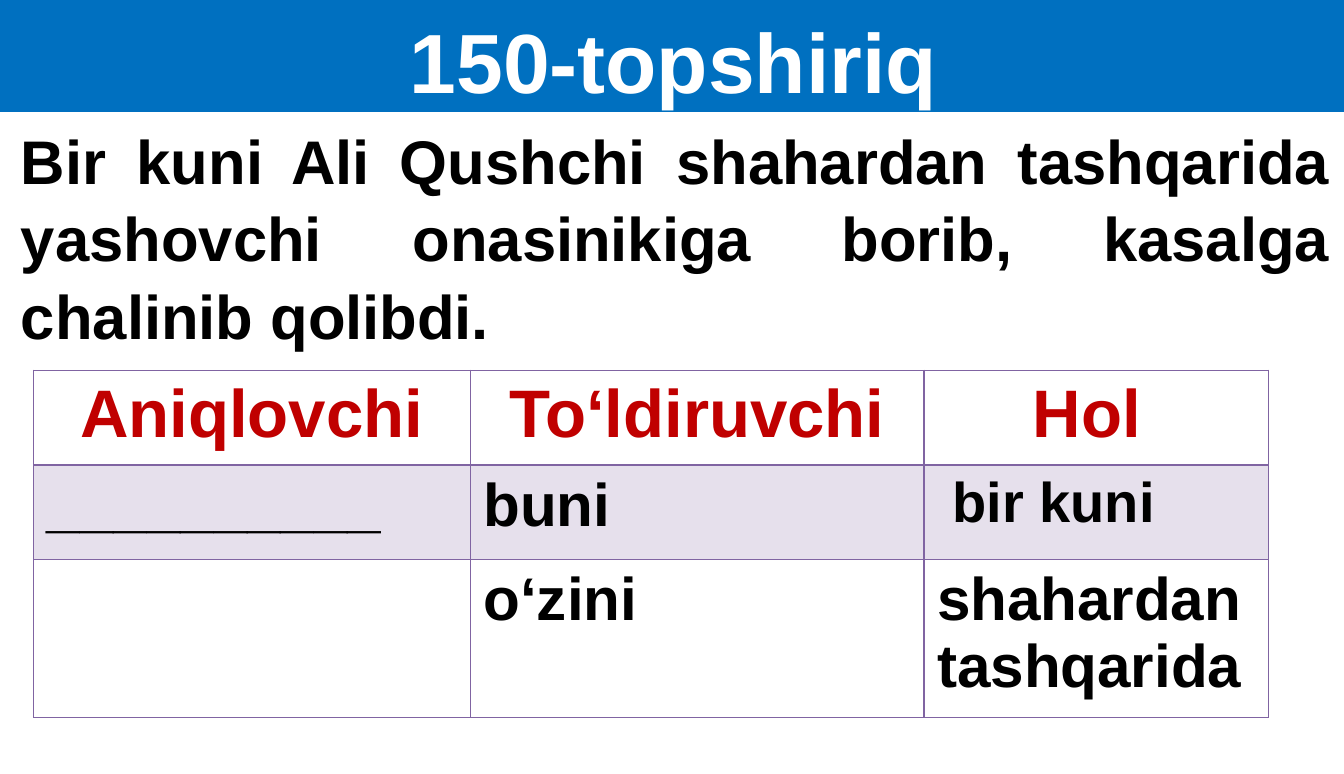
from pptx import Presentation
from pptx.dml.color import RGBColor
from pptx.enum.text import MSO_ANCHOR as Anchor, MSO_AUTO_SIZE as AutoSize, PP_ALIGN as Align
from pptx.oxml.ns import qn
from pptx.util import Pt
from lxml.etree import SubElement

TITLE = "150-topshiriq"
SENTENCE = ("Bir kuni Ali Qushchi shahardan tashqarida yashovchi "
            "onasinikiga borib, kasalga chalinib qolibdi.")
ROWS = [
    [("Aniqlovchi", 48), ("To‘ldiruvchi", 48), ("Hol ", 48)],
    [("__________", 43), ("buni", 43), (" bir kuni", 40)],
    [("", 43), ("o‘zini", 43), ("shahardan tashqarida", 43)],
]
COLUMN_WIDTHS = [312, 324, 246]
ROW_HEIGHTS = [67.5, 67.5, 113]
BLUE, WHITE, BLACK, RED = "0070C0", "FFFFFF", "000000", "C00000"
PURPLE, LILAC = "8064A2", "E6E0EC"


def colour(value):
    return RGBColor.from_string(value)


def place(shape, left, top, width, height):
    shape.left, shape.top, shape.width, shape.height = map(Pt, (left, top, width, height))


def set_all(target, values):
    for name, value in values.items():
        setattr(target, name, value)


def margins(left, top, right, bottom):
    return {"margin_left": Pt(left), "margin_top": Pt(top),
            "margin_right": Pt(right), "margin_bottom": Pt(bottom)}


def write(frame, text, size, ink, align):
    para = frame.paragraphs[0]
    para.alignment = align
    fonts = [para.font]
    if text:
        span = para.add_run()
        span.text = text
        fonts = [span.font]
    for font in fonts:
        set_all(font, {"name": "Arial", "size": Pt(size), "bold": True})
        font.color.rgb = colour(ink)


def add_borders(cell, widths):
    """Draw cell borders, which must come before the fill in the cell's XML."""
    properties = cell._tc.get_or_add_tcPr()
    for side, width in widths.items():
        line = SubElement(properties, qn("a:" + side), w=str(Pt(width)))
        SubElement(SubElement(line, qn("a:solidFill")), qn("a:srgbClr"), val=PURPLE)


def add_title(page):
    title = page.shapes.title
    place(title, 0, 0, 962, 80)
    title.fill.solid()
    title.fill.fore_color.rgb = colour(BLUE)
    set_all(title.text_frame, {"word_wrap": True, "auto_size": AutoSize.NONE,
                               "vertical_anchor": Anchor.MIDDLE, **margins(7, 9, 7, 3)})
    write(title.text_frame, TITLE, 60, WHITE, Align.CENTER)


def add_sentence(page):
    box = page.shapes.add_textbox(Pt(10), Pt(80), Pt(948), Pt(167))
    set_all(box.text_frame, {"word_wrap": True, **margins(5, 5, 7, 3)})
    write(box.text_frame, SENTENCE, 44, BLACK, Align.JUSTIFY)
    box.text_frame.paragraphs[0].line_spacing = 1.05


def add_word_table(page):
    table = page.shapes.add_table(len(ROWS), len(COLUMN_WIDTHS), Pt(24), Pt(264.5),
                                  Pt(sum(COLUMN_WIDTHS)), Pt(sum(ROW_HEIGHTS))).table
    for column, width in zip(table.columns, COLUMN_WIDTHS):
        column.width = Pt(width)
    for row, height in zip(table.rows, ROW_HEIGHTS):
        row.height = Pt(height)
    for r, words in enumerate(ROWS):
        header = r == 0
        for c, (word, size) in enumerate(words):
            cell = table.cell(r, c)
            set_all(cell, margins(9.4, 5, 9.4, 5))
            write(cell.text_frame, word, size, RED if header else BLACK,
                  Align.CENTER if header else Align.LEFT)
            add_borders(cell, {"lnL": 1, "lnR": 1, "lnT": 2 if r == 1 else 1,
                               "lnB": 2 if header else 1})
            if r == 1:
                cell.fill.solid()
                cell.fill.fore_color.rgb = colour(LILAC)
            else:
                cell.fill.background()


def main():
    deck = Presentation()
    deck.slide_width, deck.slide_height = Pt(960), Pt(553)
    page = deck.slides.add_slide(deck.slide_layouts[5])
    add_title(page)
    add_sentence(page)
    add_word_table(page)
    deck.save("out.pptx")


if __name__ == "__main__":
    main()
